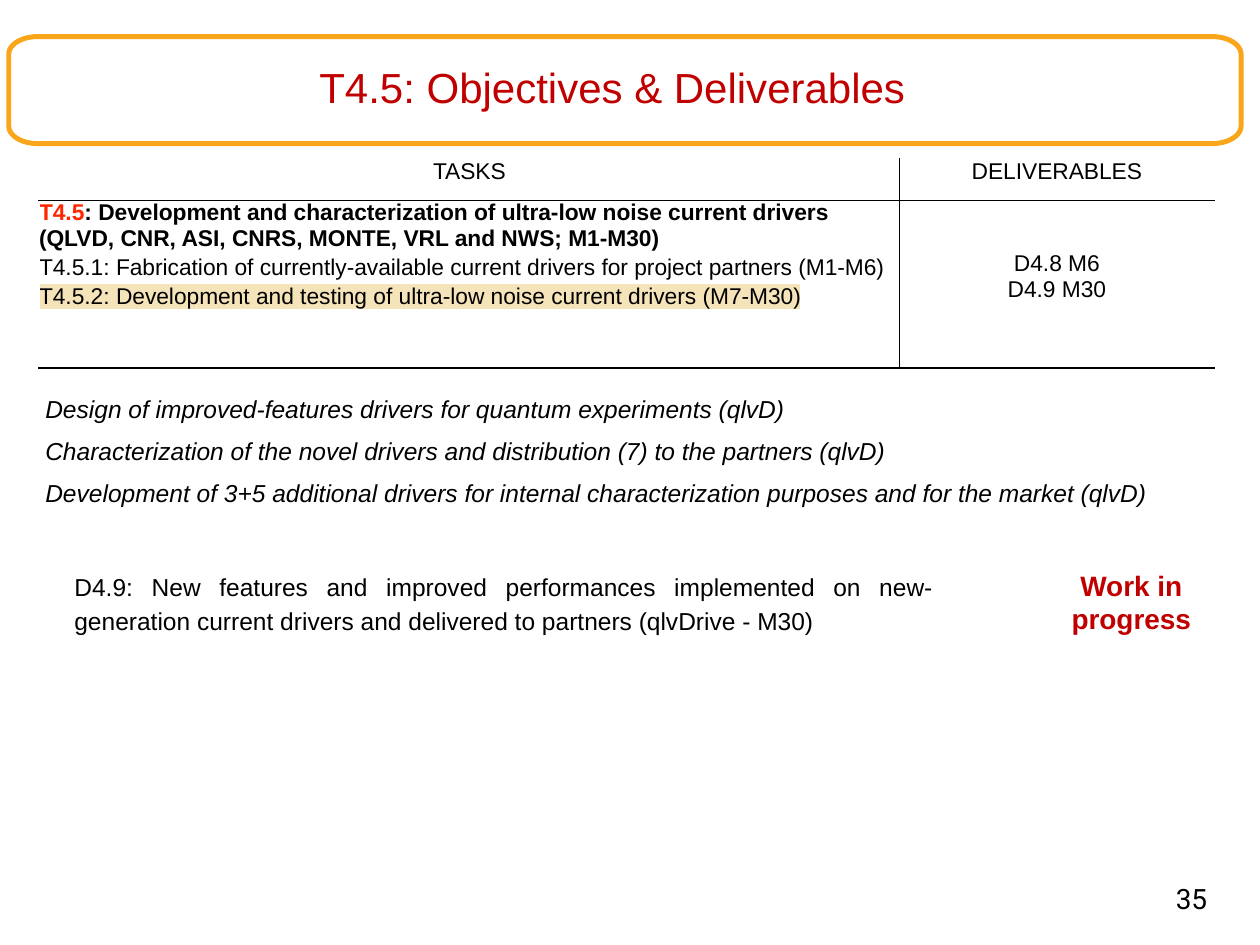
from dataclasses import dataclass
from math import cos, pi, sin

from lxml.etree import SubElement
from pptx import Presentation
from pptx.dml.color import RGBColor
from pptx.enum.text import MSO_ANCHOR, PP_ALIGN
from pptx.oxml import parse_xml
from pptx.oxml.ns import nsdecls, qn
from pptx.util import Pt


@dataclass(frozen=True)
class Theme:
    font: str = "Arial"
    number_font: str = "Roboto"
    black: str = "000000"
    title: str = "C00000"
    task: str = "FF2600"
    frame: str = "FAA61A"
    highlight: str = "F5E4B9"
    title_size: float = 24
    status_size: float = 16
    body_size: float = 14
    table_size: float = 13


@dataclass(frozen=True)
class Line:
    """One paragraph: spans are (text, colour) pairs; a colour of None means black."""
    spans: tuple
    spacing: float = 1.0
    bold: bool = False
    marked: bool = False


class SlideBuilder:
    def __init__(self, page, theme):
        self.page = page
        self.theme = theme

    def fill_text(self, frame, lines, size, align=PP_ALIGN.LEFT, font=None, italic=False):
        for index, line in enumerate(lines):
            para = frame.paragraphs[0] if index == 0 else frame.add_paragraph()
            para.alignment = align
            para.line_spacing = line.spacing
            para.font.name = font or self.theme.font
            para.font.size = Pt(size)
            para.font.bold = line.bold
            para.font.italic = italic
            for text, colour in line.spans:
                span = para.add_run()
                span.text = text
                span.font.color.rgb = RGBColor.from_string(colour or self.theme.black)
                if line.marked:
                    self.mark(span)

    def mark(self, span):
        """Put a highlight behind a span, right after its text fill."""
        highlight = parse_xml(
            f'<a:highlight {nsdecls("a")}><a:srgbClr val="{self.theme.highlight}"/></a:highlight>')
        span._r.get_or_add_rPr().find(qn("a:solidFill")).addnext(highlight)

    def text(self, left, top, width, height, lines, size, inset=3.6,
             anchor=MSO_ANCHOR.TOP, **style):
        box = self.page.shapes.add_textbox(Pt(left), Pt(top), Pt(width), Pt(height))
        frame = box.text_frame
        frame.word_wrap = True
        frame.vertical_anchor = anchor
        frame.margin_left = frame.margin_right = Pt(inset)
        frame.margin_top = frame.margin_bottom = Pt(inset)
        self.fill_text(frame, lines, size, **style)

    def rounded_frame(self, left, top, width, height, radius_x, radius_y, steps=12):
        """Outline with elliptical corners, traced clockwise from the right side."""
        right, bottom = left + width - radius_x, top + height - radius_y
        centres = [(right, bottom), (left + radius_x, bottom),
                   (left + radius_x, top + radius_y), (right, top + radius_y)]
        points = []
        for quarter, (x, y) in enumerate(centres):
            for step in range(steps + 1):
                angle = (quarter + step / steps) * pi / 2
                points.append((Pt(x + radius_x * cos(angle)), Pt(y + radius_y * sin(angle))))
        builder = self.page.shapes.build_freeform(*points[0])
        builder.add_line_segments(points[1:], close=True)
        shape = builder.convert_to_shape()
        shape.shadow.inherit = False
        shape.fill.background()
        shape.line.color.rgb = RGBColor.from_string(self.theme.frame)
        shape.line.width = Pt(2.83)

    def table(self, left, top, widths, heights):
        holder = self.page.shapes.add_table(
            len(heights), len(widths), Pt(left), Pt(top), Pt(sum(widths)), Pt(sum(heights)))
        table = holder.table
        table.first_row = table.horz_banding = False
        for column, width in zip(table.columns, widths):
            column.width = Pt(width)
        for row, height in zip(table.rows, heights):
            row.height = Pt(height)
        return table

    def cell(self, cell, lines, sides, align, margin_top=0):
        cell.margin_left = cell.margin_right = cell.margin_bottom = 0
        cell.margin_top = Pt(margin_top)
        self.fill_text(cell.text_frame, lines, self.theme.table_size, align)
        properties = cell._tc.get_or_add_tcPr()
        for side in sides:
            border = SubElement(properties, qn(f"a:ln{side}"), w=str(Pt(1)))
            fill = SubElement(border, qn("a:solidFill"))
            SubElement(fill, qn("a:srgbClr"), val=self.theme.black)
        cell.fill.background()


def plain(text, **style):
    return Line(((text, None),), **style)


def main():
    deck = Presentation()
    deck.slide_width, deck.slide_height = Pt(720), Pt(540)
    page = deck.slides.add_slide(deck.slide_layouts[6])
    theme = Theme()
    slide = SlideBuilder(page, theme)

    slide.rounded_frame(5, 20.9, 704.2, 61.2, 16.6, 10.1)
    slide.text(126, 38.2, 447.8, 25.9,
               [Line((("T4.5: Objectives & Deliverables", theme.title),), spacing=0.9)],
               theme.title_size, inset=0, anchor=MSO_ANCHOR.MIDDLE, align=PP_ALIGN.CENTER)
    slide.text(525.6, 500.4, 167.8, 28.8, [plain("35")], theme.status_size,
               align=PP_ALIGN.RIGHT, font=theme.number_font)

    table = slide.table(22.3, 90.7, [491.8, 179.6], [23.8, 95.8])
    tasks = [
        Line((("T4.5", theme.task),
              (": Development and characterization of ultra-low noise current drivers "
               "(QLVD, CNR, ASI, CNRS, MONTE, VRL and NWS; M1-M30)", None)), bold=True),
        plain("T4.5.1: Fabrication of currently-available current drivers "
              "for project partners (M1-M6)", spacing=1.14),
        plain("T4.5.2: Development and testing of ultra-low noise current drivers (M7-M30)",
              spacing=1.14, marked=True),
    ]
    slide.cell(table.cell(0, 0), [plain("TASKS")], "RB", PP_ALIGN.CENTER)
    slide.cell(table.cell(0, 1), [plain("DELIVERABLES")], "LB", PP_ALIGN.CENTER)
    slide.cell(table.cell(1, 0), tasks, "RTB", PP_ALIGN.LEFT)
    slide.cell(table.cell(1, 1), [plain("D4.8 M6"), plain("D4.9 M30")], "LTB",
               PP_ALIGN.CENTER, margin_top=29)

    activities = [
        "Design of improved-features drivers for quantum experiments (qlvD)",
        "Characterization of the novel drivers and distribution (7) to the partners (qlvD)",
        "Development of 3+5 additional drivers for internal characterization purposes "
        "and for the market (qlvD)",
    ]
    slide.text(22.3, 214.6, 671.8, 77, [plain(text, spacing=1.43) for text in activities],
               theme.body_size, italic=True)
    slide.text(38.9, 321.1, 498.2, 43.9,
               [plain("D4.9: New features and improved performances implemented on "
                      "new-generation current drivers and delivered to partners "
                      "(qlvDrive - M30)", spacing=1.14)],
               theme.body_size, align=PP_ALIGN.JUSTIFY)
    slide.text(599, 321.1, 95, 46.1,
               [Line((("Work in progress", theme.title),), bold=True)],
               theme.status_size, align=PP_ALIGN.CENTER)

    deck.save("out.pptx")


if __name__ == "__main__":
    main()
